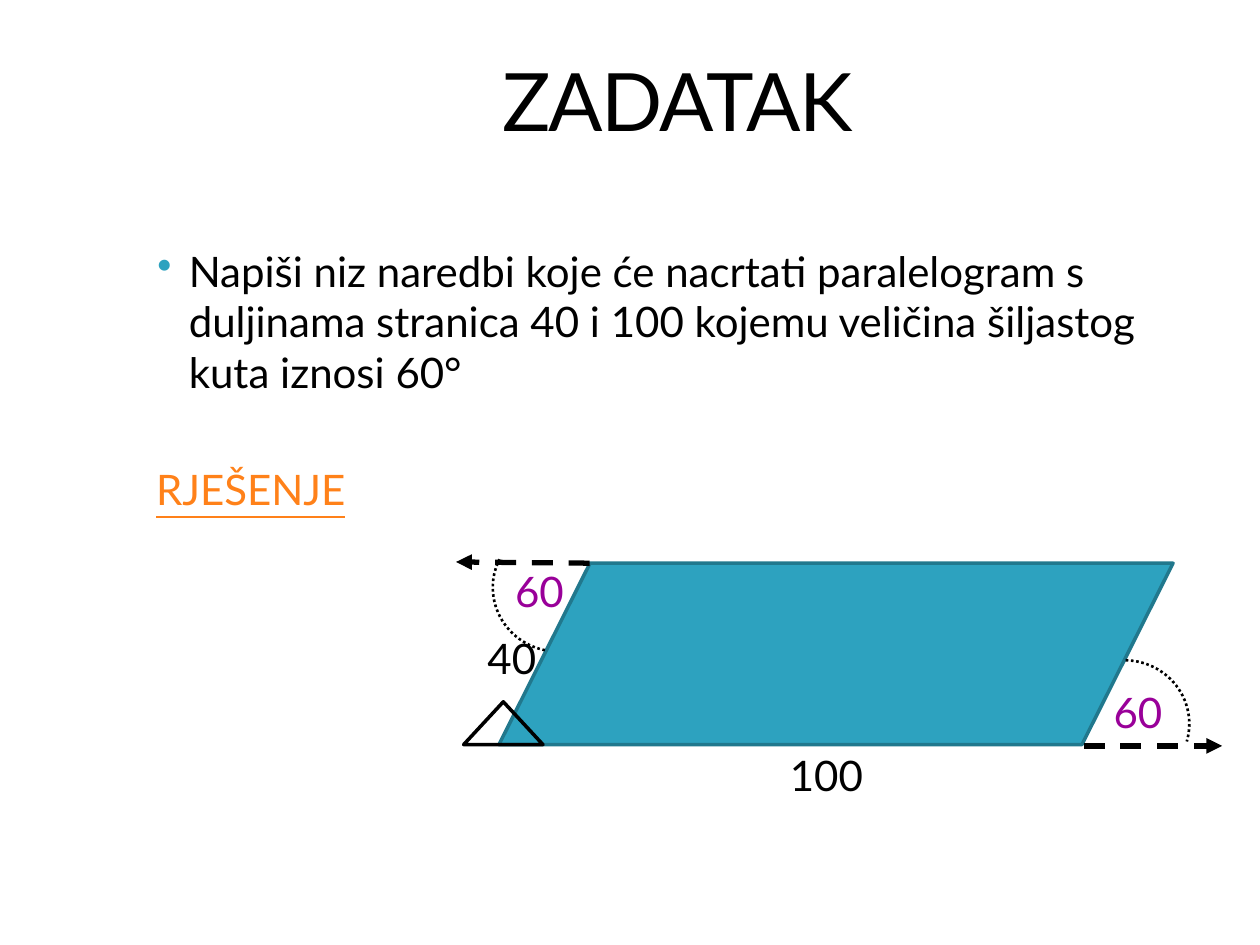
from lxml.etree import SubElement
from pptx import Presentation
from pptx.dml.color import RGBColor
from pptx.enum.dml import MSO_LINE_DASH_STYLE as Dash
from pptx.enum.shapes import MSO_CONNECTOR as Wire, MSO_SHAPE as Kind
from pptx.enum.text import MSO_ANCHOR as Anchor, MSO_AUTO_SIZE as Fit, PP_ALIGN as Align
from pptx.oxml.ns import qn
from pptx.util import Inches, Pt

BLACK, TEAL, EDGE = "000000", "2DA2BF", "21788D"
ORANGE, PURPLE = "FF8119", "990099"


def color(code):
    """Turn a hex string into a colour."""
    return RGBColor.from_string(code)


def write(para, text, size=24, ink=BLACK, font="Lato", under=None, track=None):
    """Add a formatted run to a paragraph."""
    run = para.add_run()
    run.text = text
    run.font.name, run.font.size = font, Pt(size)
    run.font.color.rgb = color(ink)
    run.font.underline = under
    if track:
        run.font._element.set("spc", str(track * 100))


def indent(para, left, hang=0, bullet=None, ink=TEAL):
    """Set the indents of a paragraph and its bullet."""
    props = para._p.get_or_add_pPr()
    props.set("marL", str(Inches(left)))
    props.set("indent", str(Inches(hang)))
    if bullet:
        tint = SubElement(props, qn("a:buClr"))
        SubElement(tint, qn("a:srgbClr"), val=ink)
        SubElement(props, qn("a:buChar"), char=bullet)


class Board:
    """Hold the style and the current slide."""

    def __init__(self, deck):
        """Start a title-only slide."""
        self.slide = deck.slides.add_slide(deck.slide_layouts[5])
        self.shapes = self.slide.shapes

    def group(self):
        """Send later elements into a new group."""
        self.shapes = self.slide.shapes.add_group_shape().shapes

    def title(self, text, left, top, width, height):
        """Place and fill the title."""
        head = self.slide.shapes.title
        head.left, head.top = Inches(left), Inches(top)
        head.width, head.height = Inches(width), Inches(height)
        frame = head.text_frame
        frame.vertical_anchor = Anchor.MIDDLE
        para = frame.paragraphs[0]
        para.alignment = Align.CENTER
        write(para, text, size=46, track=-1)

    def box(self, left, top, width, height):
        """Add a wrapping text box and return its frame."""
        frame = self.shapes.add_textbox(
            *map(Inches, (left, top, width, height))).text_frame
        frame.word_wrap = True
        return frame

    def label(self, text, left, top, width, ink=BLACK):
        """Add a one-line label."""
        frame = self.box(left, top, width, 0.5)
        frame.auto_size = Fit.SHAPE_TO_FIT_TEXT
        write(frame.paragraphs[0], text, ink=ink)

    def shape(self, kind, left, top, width, height, adjust=(), fill=None,
              line=BLACK, weight=2, dash=None, turn=0):
        """Add a preset shape."""
        item = self.shapes.add_shape(
            kind, *map(Inches, (left, top, width, height)))
        item.shadow.inherit = False
        item.rotation = turn
        for spot, value in enumerate(adjust):
            item.adjustments[spot] = value
        if fill:
            item.fill.solid()
            item.fill.fore_color.rgb = color(fill)
        else:
            item.fill.background()
        item.line.color.rgb = color(line)
        item.line.width = Pt(weight)
        item.line.dash_style = dash

    def arc(self, left, top, turn=0):
        """Add a dotted angle mark."""
        self.shape(Kind.ARC, left, top, 1.03, 1.01, adjust=(162.665, 9.469),
                   weight=1.5, dash=Dash.ROUND_DOT, turn=turn)

    def arrow(self, *ends):
        """Add a dashed arrow from one point to another."""
        wire = self.shapes.add_connector(Wire.STRAIGHT, *map(Inches, ends))
        wire.line.color.rgb = color(BLACK)
        wire.line.width = Pt(3)
        wire.line.dash_style = Dash.DASH
        SubElement(wire.line._get_or_add_ln(), qn("a:tailEnd"), type="triangle")
        SubElement(wire._element.spPr, qn("a:effectLst"))


def main():
    """Build the slide and save it."""
    deck = Presentation()
    deck.slide_width, deck.slide_height = Inches(10), Inches(7.5)
    board = Board(deck)
    board.title("ZADATAK", 0.99, 0.36, 8.77, 0.86)

    body = board.box(1.02, 1.9, 8.74, 2.23)
    task = body.paragraphs[0]
    indent(task, 0.38, -0.25, bullet="•")
    write(task, "Napiši niz naredbi koje će nacrtati paralelogram s duljinama "
                "stranica 40 i 100 kojemu veličina šiljastog kuta iznosi 60°")
    answer = body.add_paragraph()
    answer.space_before = Pt(38.4)
    indent(answer, 0.12)
    write(answer, "RJEŠENJE", ink=ORANGE, under=True)

    board.group()
    board.shape(Kind.PARALLELOGRAM, 3.96, 4.47, 5.35, 1.44, adjust=(0.502,),
                fill=TEAL, line=EDGE)
    board.label("100", 6.17, 5.9, 0.9)
    board.label("40", 3.77, 4.97, 0.9)
    board.shape(Kind.ISOSCELES_TRIANGLE, 3.68, 5.57, 0.63, 0.34)
    board.label("60", 8.74, 5.4, 0.66, ink=PURPLE)
    board.arrow(8.6, 5.92, 9.7, 5.92)
    board.arrow(4.68, 4.47, 3.62, 4.46)
    board.label("60", 3.99, 4.44, 0.66, ink=PURPLE)
    board.arc(8.41, 5.24)
    board.arc(3.91, 4.16, turn=190.4)
    deck.save("out.pptx")


if __name__ == "__main__":
    main()
